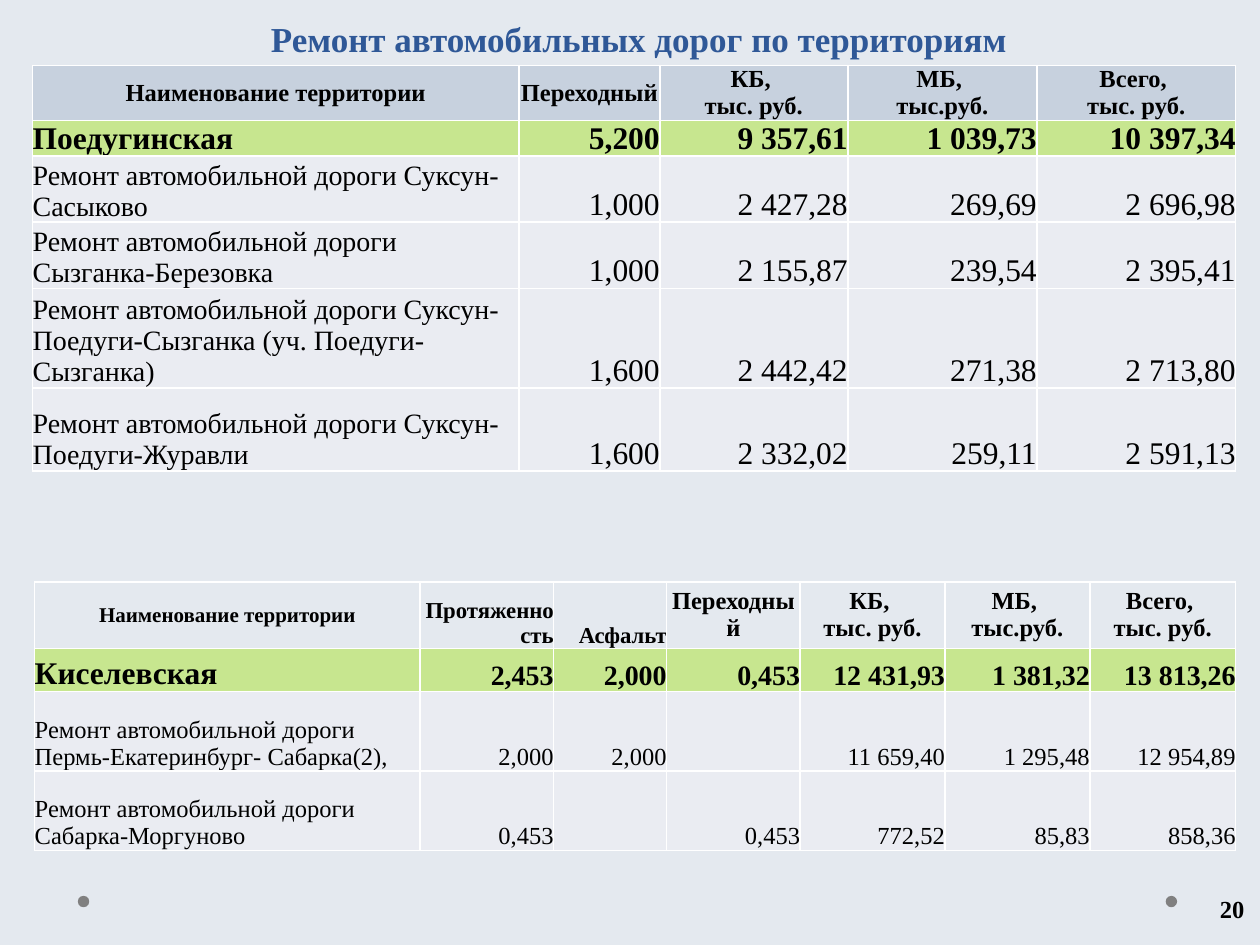
from dataclasses import dataclass

from lxml.etree import SubElement
from pptx import Presentation
from pptx.dml.color import RGBColor as RGB
from pptx.enum.shapes import MSO_SHAPE as SHAPE
from pptx.enum.text import MSO_ANCHOR as ANCHOR, PP_ALIGN as ALIGN
from pptx.oxml.ns import qn
from pptx.util import Cm, Pt


@dataclass(frozen=True)
class Theme:
    font: str = "Times New Roman"
    back: str = "E4E9EF"
    title: str = "2F5897"
    text: str = "000000"
    header: str = "C7D1DE"
    total: str = "C7E68F"
    body: str = "EAECF2"
    border: str = "FFFFFF"
    dot: str = "808080"
    title_size: int = 20
    total_size: int = 18
    road_size: int = 16
    head_size: int = 14
    narrow_size: int = 13
    small_size: int = 12


T = Theme()
MONEY = ["КБ, \nтыс. руб.", "МБ, \nтыс.руб.", "Всего, \nтыс. руб."]

POEDUGI = [
    ["Наименование территории", "Переходный", *MONEY],
    ["Поедугинская", "5,200", "9 357,61", "1 039,73", "10 397,34"],
    ["Ремонт автомобильной дороги Суксун-Сасыково",
     "1,000", "2 427,28", "269,69", "2 696,98"],
    ["Ремонт автомобильной дороги Сызганка-Березовка",
     "1,000", "2 155,87", "239,54", "2 395,41"],
    ["Ремонт автомобильной дороги Суксун-Поедуги-Сызганка (уч. Поедуги-Сызганка)",
     "1,600", "2 442,42", "271,38", "2 713,80"],
    ["Ремонт автомобильной дороги Суксун-Поедуги-Журавли",
     "1,600", "2 332,02", "259,11", "2 591,13"],
]
KISELEVO = [
    ["Наименование территории", "Протяженность", "Асфальт", "Переходный", *MONEY],
    ["Киселевская", "2,453", "2,000", "0,453", "12 431,93", "1 381,32", "13 813,26"],
    ["Ремонт автомобильной дороги Пермь-Екатеринбург- Сабарка(2),",
     "2,000", "2,000", "", "11 659,40", "1 295,48", "12 954,89"],
    ["Ремонт автомобильной дороги Сабарка-Моргуново",
     "0,453", "", "0,453", "772,52", "85,83", "858,36"],
]


def format_text(tf, size, color=T.text, bold=True, align=ALIGN.LEFT):
    for p in tf.paragraphs:
        p.alignment = align
        p.font.size = Pt(size)
        for r in p.runs:
            r.font.name, r.font.size, r.font.bold = T.font, Pt(size), bold
            r.font.color.rgb = RGB.from_string(color)


def set_borders(cell):
    tc_pr = cell._tc.get_or_add_tcPr()
    for i, side in enumerate(("lnL", "lnR", "lnT", "lnB")):
        ln = tc_pr.makeelement(qn(f"a:{side}"), {"w": str(Pt(1))})
        fill = SubElement(ln, qn("a:solidFill"))
        SubElement(fill, qn("a:srgbClr"), val=T.border)
        tc_pr.insert(i, ln)


def fill_cell(cell, text, fill, size, bold, align, anchor):
    cell.text = text
    cell.margin_left = cell.margin_right = cell.margin_top = cell.margin_bottom = 0
    cell.vertical_anchor = anchor
    cell.fill.solid()
    cell.fill.fore_color.rgb = RGB.from_string(fill)
    set_borders(cell)
    format_text(cell.text_frame, size, bold=bold, align=align)


def add_road_table(s, left, top, widths, heights, rows, head_fill,
                   name_size, value_size, total_size, header_styles):
    """Header row, highlighted total row, then one row per road."""
    frame = s.shapes.add_table(len(rows), len(widths), Cm(left), Cm(top),
                               Cm(sum(widths)), Cm(sum(heights)))
    table = frame.table
    table.first_row = table.horz_banding = False
    for col, width in zip(table.columns, widths):
        col.width = Cm(width)
    for row, height in zip(table.rows, heights):
        row.height = Cm(height)

    for i, row in enumerate(rows):
        for j, text in enumerate(row):
            align = ALIGN.RIGHT if j else ALIGN.LEFT
            if i == 0:
                size, align, anchor = header_styles.get(
                    j, (T.head_size, ALIGN.CENTER, ANCHOR.MIDDLE))
                style = head_fill, size, True, align, anchor
            elif i == 1:
                size = total_size if j else T.total_size
                style = T.total, size, True, align, ANCHOR.BOTTOM
            else:
                size = value_size if j else name_size
                style = T.body, size, False, align, ANCHOR.BOTTOM
            fill_cell(table.cell(i, j), text, *style)


def add_dot(s, left, top, size=0.23):
    sp = s.shapes.add_shape(SHAPE.OVAL, Cm(left), Cm(top), Cm(size), Cm(size))
    sp.shadow.inherit = False
    sp.fill.solid()
    sp.fill.fore_color.rgb = RGB.from_string(T.dot)
    sp.line.fill.background()


def add_title(s, text):
    sp = s.shapes.title
    sp.left, sp.top, sp.width, sp.height = Cm(0.08), Cm(0.13), Cm(25.6), Cm(1.19)
    tf = sp.text_frame
    tf.text = text
    tf.vertical_anchor = ANCHOR.BOTTOM
    format_text(tf, T.title_size, T.title, align=ALIGN.CENTER)


def add_page_number(s, number):
    tf = s.shapes.add_textbox(Cm(24.51), Cm(17.65), Cm(0.89), Cm(1.32)).text_frame
    tf.word_wrap = True
    tf.margin_left = Cm(0.08)
    tf.margin_right = tf.margin_top = tf.margin_bottom = Cm(0.13)
    tf.vertical_anchor = ANCHOR.MIDDLE
    tf.text = number
    format_text(tf, T.head_size)


def main():
    prs = Presentation()
    prs.slide_width, prs.slide_height = Cm(25.4), Cm(19.05)
    s = prs.slides.add_slide(prs.slide_layouts[5])
    s.background.fill.solid()
    s.background.fill.fore_color.rgb = RGB.from_string(T.back)

    # Footer dots and title
    for left in (23.5, 1.57):
        add_dot(s, left, 18.06)
    add_title(s, "Ремонт автомобильных дорог по территориям")

    # Upper table
    add_road_table(s, 0.66, 1.32, [9.8, 2.84, 3.79, 3.81, 4.01],
                   [1.11, 0.71, 1.34, 1.34, 2, 1.67], POEDUGI, T.header,
                   T.road_size, T.total_size, T.total_size, {})

    # Lower table
    narrow = T.narrow_size, ALIGN.RIGHT, ANCHOR.BOTTOM
    add_road_table(s, 0.7, 11.73, [7.77, 2.69, 2.28, 2.69, 2.92, 2.92, 2.94],
                   [1.34, 0.87, 1.6, 1.6], KISELEVO, T.back,
                   T.head_size, T.head_size, T.road_size,
                   {0: (T.small_size, ALIGN.CENTER, ANCHOR.MIDDLE),
                    1: narrow, 2: narrow})

    add_page_number(s, "20")
    prs.save("out.pptx")


if __name__ == "__main__":
    main()
